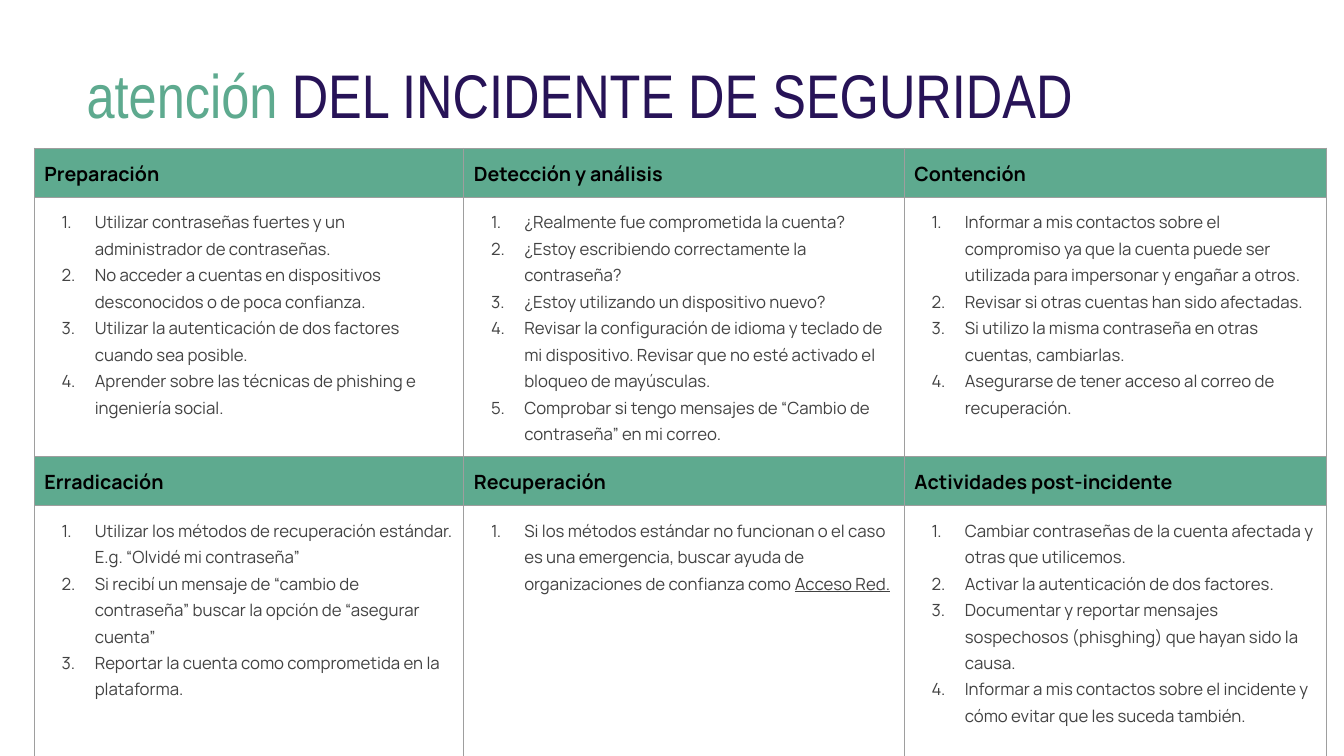
from lxml import etree
from pptx import Presentation
from pptx.dml.color import RGBColor
from pptx.enum import text
from pptx.oxml import ns
from pptx.util import Inches, Pt

GREEN = RGBColor(0x5E, 0xAA, 0x8F)
PURPLE = RGBColor(0x27, 0x13, 0x57)
BLACK = RGBColor(0, 0, 0)
GRAY = RGBColor(0x42, 0x42, 0x42)
BORDER = RGBColor(0x9E, 0x9E, 0x9E)

TITLE = [("atención", GREEN), (" DEL INCIDENTE DE SEGURIDAD", PURPLE)]
UNDERLINED = "Acceso Red."
PHASES = [
    [
        ("Preparación", [
            "Utilizar contraseñas fuertes y un administrador de contraseñas.",
            "No acceder a cuentas en dispositivos desconocidos o de poca confianza.",
            "Utilizar la autenticación de dos factores cuando sea posible.",
            "Aprender sobre las técnicas de phishing e ingeniería social.",
        ]),
        ("Detección y análisis", [
            "¿Realmente fue comprometida la cuenta?",
            "¿Estoy escribiendo correctamente la contraseña?",
            "¿Estoy utilizando un dispositivo nuevo?",
            "Revisar la configuración de idioma y teclado de mi dispositivo. "
            "Revisar que no esté activado el bloqueo de mayúsculas.",
            "Comprobar si tengo mensajes de “Cambio de contraseña” en mi correo.",
        ]),
        ("Contención", [
            "Informar a mis contactos sobre el compromiso ya que la cuenta puede ser "
            "utilizada para impersonar y engañar a otros.",
            "Revisar si otras cuentas han sido afectadas.",
            "Si utilizo la misma contraseña en otras cuentas, cambiarlas.",
            "Asegurarse de tener acceso al correo de recuperación.",
        ]),
    ],
    [
        ("Erradicación", [
            "Utilizar los métodos de recuperación estándar. E.g. “Olvidé mi contraseña”",
            "Si recibí un mensaje de “cambio de contraseña” buscar la opción de “asegurar cuenta”",
            "Reportar la cuenta como comprometida en la plataforma.",
        ]),
        ("Recuperación", [
            "Si los métodos estándar no funcionan o el caso es una emergencia, buscar ayuda "
            "de organizaciones de confianza como " + UNDERLINED,
        ]),
        ("Actividades post-incidente", [
            "Cambiar contraseñas de la cuenta afectada y otras que utilicemos.",
            "Activar la autenticación de dos factores.",
            "Documentar y reportar mensajes sospechosos (phisghing) que hayan sido la causa.",
            "Informar a mis contactos sobre el incidente y cómo evitar que les suceda también.",
        ]),
    ],
]
COLUMN_WIDTHS = [4.26, 4.37, 4.19]
ROW_HEIGHTS = [0.43, 2.57, 0.43, 2.55]


def style(para, size, color, bold, spacing):
    para.line_spacing = spacing
    font = para.font
    font.name, font.size, font.bold = "Manrope", Pt(size), bold
    font.color.rgb = color


def number(para):
    """Turn the paragraph into an item of a numbered list."""
    props = para._p.get_or_add_pPr()
    props.set("marL", str(Inches(0.5)))
    props.set("indent", str(Inches(-0.33)))
    bullet_color = etree.SubElement(props, ns.qn("a:buClr"))
    etree.SubElement(bullet_color, ns.qn("a:srgbClr"), val=str(GRAY))
    etree.SubElement(props, ns.qn("a:buAutoNum"), type="arabicPeriod")


def frame_cell(cell):
    """Set the margins and draw the four borders of a cell."""
    cell.margin_left = cell.margin_right = Inches(0.1)
    cell.margin_top = cell.margin_bottom = Inches(0.1)
    props = cell._tc.get_or_add_tcPr()
    for place, side in enumerate(("lnL", "lnR", "lnT", "lnB")):
        line = etree.Element(ns.qn("a:" + side), w=str(Pt(0.75)))
        fill = etree.SubElement(line, ns.qn("a:solidFill"))
        etree.SubElement(fill, ns.qn("a:srgbClr"), val=str(BORDER))
        props.insert(place, line)


def fill_heading(cell, heading):
    cell.fill.solid()
    cell.fill.fore_color.rgb = GREEN
    frame_cell(cell)
    para = cell.text_frame.paragraphs[0]
    para.add_run().text = heading
    style(para, 14, BLACK, True, 1.08)


def fill_steps(cell, steps):
    cell.fill.background()
    frame_cell(cell)
    frame = cell.text_frame
    for index, step in enumerate(steps):
        para = frame.add_paragraph() if index else frame.paragraphs[0]
        number(para)
        para.add_run().text = step.removesuffix(UNDERLINED)
        if step.endswith(UNDERLINED):
            span = para.add_run()
            span.text = UNDERLINED
            span.font.underline = True
        style(para, 12, GRAY, False, 1.15)


def add_phases(page):
    table = page.shapes.add_table(
        len(ROW_HEIGHTS), len(COLUMN_WIDTHS), Inches(0.34), Inches(1.47),
        Inches(sum(COLUMN_WIDTHS)), Inches(sum(ROW_HEIGHTS))).table
    table.first_row = table.horz_banding = False
    for column, width in zip(table.columns, COLUMN_WIDTHS):
        column.width = Inches(width)
    for row, height in zip(table.rows, ROW_HEIGHTS):
        row.height = Inches(height)
    for band, phases in enumerate(PHASES):
        for column, (heading, steps) in enumerate(phases):
            fill_heading(table.cell(2 * band, column), heading)
            fill_steps(table.cell(2 * band + 1, column), steps)


def add_title(page):
    box = page.shapes.add_textbox(Inches(0.76), Inches(0.25), Inches(11.72), Inches(1.45))
    frame = box.text_frame
    frame.word_wrap = True
    frame.vertical_anchor = text.MSO_ANCHOR.MIDDLE
    para = frame.paragraphs[0]
    para.line_spacing = 0.9
    para.font.name, para.font.size = "Arial Narrow", Pt(44)
    for words, color in TITLE:
        span = para.add_run()
        span.text = words
        span.font.color.rgb = color


def main():
    deck = Presentation()
    deck.slide_width, deck.slide_height = Inches(13.33), Inches(7.5)
    page = deck.slides.add_slide(deck.slide_layouts[6])
    add_phases(page)
    add_title(page)
    deck.save("out.pptx")


if __name__ == "__main__":
    main()
